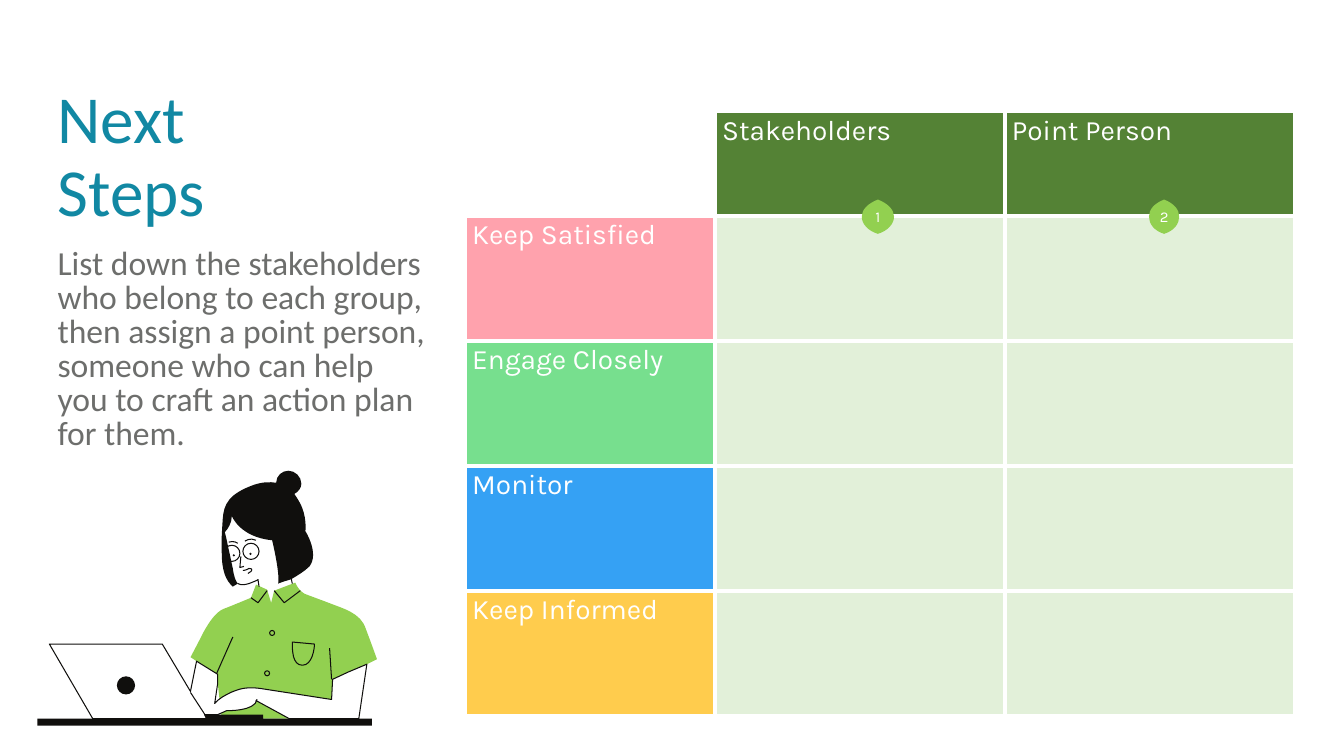
from lxml import etree
from pptx import Presentation
from pptx.dml.color import RGBColor
from pptx.enum.text import MSO_ANCHOR, MSO_AUTO_SIZE, PP_ALIGN
from pptx.oxml.ns import qn
from pptx.util import Cm, Pt

TOP, MIDDLE = MSO_ANCHOR.TOP, MSO_ANCHOR.MIDDLE
LEFT, CENTER = PP_ALIGN.LEFT, PP_ALIGN.CENTER
GROW = MSO_AUTO_SIZE.SHAPE_TO_FIT_TEXT

COLORS = {
    "title": "1188A3", "body": "6D6E6C", "white": "FFFFFF", "ink": "100F0D",
    "lime": "92D050", "header": "548235", "cell": "E2F0D9",
    "pink": "FFA2AD", "green": "77DF8E", "blue": "35A1F4", "yellow": "FFCC4D",
}
GRID = Cm(0.0254)
HEADERS = ["Stakeholders", "Point Person"]
GROUPS = [("Keep Satisfied", "pink"), ("Engage Closely", "green"),
          ("Monitor", "blue"), ("Keep Informed", "yellow")]
BODY = ("List down the stakeholders who belong to each group, then assign a point "
        "person, someone who can help you to craft an action plan for them.")

# Outlines on the drawing grid: pairs are corners, sixes are curves.
FACE = [(292, 602), (260, 602), (256, 575), (256, 575, 255, 575, 247, 578),
        (239, 581, 233, 580, 230, 564), (227, 549, 222, 526, 222, 526),
        (224, 511), (234, 499), (282, 495), (286, 553), (292, 602)]
SHIRT = [(215, 669), (189, 652), (189, 652, 197, 637, 202, 627),
         (207, 618, 214, 607, 222, 604), (230, 601, 249, 593, 249, 593),
         (254, 580), (265, 585), (269, 598), (272, 586), (293, 578),
         (293, 578, 296, 586, 302, 589), (307, 591, 310, 592, 326, 598),
         (341, 604, 358, 608, 363, 624), (369, 640, 374, 654, 374, 654),
         (364, 659), (340, 713), (220, 713), (215, 669)]
ARMS_AND_LAPTOP = [(364, 659), (356, 713), (287, 713), (254, 695), (255, 694),
                   (253, 706, 225, 705, 225, 705), (216, 709), (203, 709), (205, 713),
                   (92, 713), (49, 639), (161, 639), (189, 686), (195, 656),
                   (216, 669), (216, 678), (213, 698), (217, 693, 223, 690, 229, 687),
                   (234, 685), (242, 682, 250, 682, 258, 683), (329, 694), (330, 674),
                   (345, 667), (364, 659)]
HAIR = [(230, 512), (230, 512, 238, 533, 270, 536), (270, 536, 278, 569, 276, 579),
        (276, 579, 281, 577, 288, 575), (290, 574), (295, 571, 302, 567, 307, 562),
        (317, 549, 303, 527, 303, 527), (303, 527, 305, 512, 297, 498),
        (296, 496, 294, 493, 292, 490), (296, 488, 299, 484, 299, 480),
        (299, 473, 293, 467, 286, 467), (280, 467, 274, 472, 274, 479),
        (268, 478, 261, 478, 252, 481), (227, 490, 222, 500, 221, 515),
        (220, 530, 220, 532, 220, 532), (220, 548), (220, 566, 224, 576, 231, 582),
        (236, 579), (234, 577, 232, 572, 231, 564), (228, 550), (226, 541),
        (225, 536, 224, 531, 223, 528), (226, 525, 230, 519, 230, 512)]
POCKET = [(290, 637), (312, 639), (312, 643, 310, 660, 300, 660),
          (290, 660, 290, 645, 290, 637)]
STROKES = [
    [(227, 538), (227, 538, 232, 536, 236, 539)],
    [(243, 537), (243, 537, 248, 533, 254, 536)],
    [(239, 552), (238, 563), (242, 562)],
    [(241, 566), (241, 566, 244, 566, 247, 564), (249, 563, 251, 565, 249, 567), (246, 569)],
    [(236, 579), (240, 581, 243, 580, 247, 579), (252, 577, 255, 576, 256, 575), (257, 582)],
    [(289, 574), (290, 579)],
    [(249, 593), (256, 598), (265, 586)],
    [(272, 586), (282, 598), (298, 586)],
    [(231, 632), (215, 668)],
    [(327, 643), (329, 674)],
    [(189, 687), (204, 710)],
]
RINGS = [(230, 549, 8), (249, 547, 8), (265, 668, 2.5), (270, 628, 2.5)]
DOTS = [(232, 551, 1.2), (248.5, 549.5, 1.2), (125, 680, 9)]


def write(frame, text, size, color, font="Calibri", align=LEFT, spacing=None, before=0, tracking=0):
    """Put formatted text in the first paragraph of a frame."""
    para = frame.paragraphs[0]
    para.alignment, para.space_before = align, Pt(before)
    if spacing:
        para.line_spacing = spacing
    span = para.add_run()
    span.text = text
    span.font.size, span.font.name = Pt(size), font
    span.font.color.rgb = RGBColor.from_string(COLORS[color])
    if tracking:
        span.font._element.set("spc", str(tracking))
    return para


def circle(x, y, r):
    """Return a circle as four curves."""
    k = 0.55 * r
    return [(x, y - r), (x + k, y - r, x + r, y - k, x + r, y),
            (x + r, y + k, x + k, y + r, x, y + r),
            (x - k, y + r, x - r, y + k, x - r, y),
            (x - r, y - k, x - k, y - r, x, y - r)]


def bar(left, top, right, bottom):
    """Return a rectangle as corners."""
    return [(left, top), (right, top), (right, bottom), (left, bottom), (left, top)]


class SlideBuilder:
    """Hold the slide and draw each kind of element on it."""

    def __init__(self, slide):
        self.slide = slide
        self.shapes = slide.shapes

    def start_group(self):
        self.shapes = self.slide.shapes.add_group_shape().shapes

    def outline(self, color, filled, strokes=()):
        ends = [(piece[-2] * GRID, piece[-1] * GRID)
                for contour in [*filled, *strokes] for piece in contour]
        builder = self.shapes.build_freeform(*ends[0], scale=1.0)
        builder.add_line_segments(ends[1:])
        shape = builder.convert_to_shape()
        shape.shadow.inherit = False
        shape.fill.solid()
        shape.fill.fore_color.rgb = RGBColor.from_string(COLORS[color])
        shape.line.fill.background()
        if strokes:
            shape.line.color.rgb = RGBColor.from_string(COLORS[color])
            shape.line.width = Pt(0.75)
        tracks = shape._element.find(".//" + qn("a:pathLst"))
        tracks.remove(tracks[0])
        for contours, style in ((filled, {"stroke": "0"}), (strokes, {"fill": "none"})):
            if contours:
                track = etree.SubElement(tracks, qn("a:path"), w=str(shape.width),
                                         h=str(shape.height), **style)
                for contour in contours:
                    self.contour(track, contour, shape, contours is filled)

    def contour(self, track, pieces, shape, close):
        for index, piece in enumerate(pieces):
            kind = "moveTo" if index == 0 else "lnTo" if len(piece) == 2 else "cubicBezTo"
            step = etree.SubElement(track, qn(f"a:{kind}"))
            for x, y in zip(piece[::2], piece[1::2]):
                etree.SubElement(step, qn("a:pt"), x=str(round(x * GRID) - shape.left),
                                 y=str(round(y * GRID) - shape.top))
        if close:
            etree.SubElement(track, qn("a:close"))

    def placeholder(self, box, left, top, width, height, text, **style):
        box.left, box.top, box.width, box.height = Cm(left), Cm(top), Cm(width), Cm(height)
        frame = box.text_frame
        frame.margin_left = frame.margin_right = frame.margin_top = frame.margin_bottom = 0
        frame.word_wrap, frame.auto_size, frame.vertical_anchor = True, GROW, TOP
        properties = write(frame, text, **style)._p.get_or_add_pPr()
        properties.set("marL", "0")
        properties.set("indent", "0")
        etree.SubElement(properties, qn("a:buNone"))

    def badge(self, number, x, half):
        self.start_group()
        self.outline("lime", [[(x, 198), (x + 10, 202, x + half, 208, x + half, 215),
                               (x + half, 222, x + 10, 229, x, 232),
                               (x - 10, 229, x - half, 222, x - half, 215),
                               (x - half, 208, x - 10, 202, x, 198)]])
        box = self.shapes.add_textbox((x - 28) * GRID, 200 * GRID, 56 * GRID, 32 * GRID)
        frame = box.text_frame
        frame.margin_left = frame.margin_right = frame.margin_top = frame.margin_bottom = Cm(0.1)
        frame.word_wrap, frame.vertical_anchor = True, MIDDLE
        write(frame, str(number), 10.7, "white", "Karla", CENTER, Pt(10.7), tracking=-20)

    def cell(self, cell, text, fill):
        properties = cell._tc.get_or_add_tcPr()
        for side in ("lnL", "lnR", "lnT", "lnB"):
            border = etree.SubElement(properties, qn(f"a:{side}"), w=str(Pt(3)))
            solid = etree.SubElement(border, qn("a:solidFill"))
            etree.SubElement(solid, qn("a:srgbClr"), val=COLORS["white"])
        cell.margin_left = cell.margin_right = Cm(0.18)
        cell.margin_top = cell.margin_bottom = Cm(0.08)
        if fill:
            cell.fill.solid()
            cell.fill.fore_color.rgb = RGBColor.from_string(COLORS[fill])
        else:
            cell.fill.background()
        if text:
            write(cell.text_frame, text, 20, "white", "Karla")

    def plan_table(self):
        rows = [[("", None)] + [(header, "header") for header in HEADERS]]
        rows += [[group] + [("", "cell")] * len(HEADERS) for group in GROUPS]
        table = self.shapes.add_table(len(rows), len(rows[0]), Cm(11.72), Cm(2.8),
                                      Cm(20.9), Cm(15.24)).table
        table.first_row = table.horz_banding = False
        for column, width in zip(table.columns, (6.3, 7.3, 7.3)):
            column.width = Cm(width)
        for index, row in enumerate(rows):
            table.rows[index].height = Cm(3.15 if index else 2.64)
            for position, (text, fill) in enumerate(row):
                self.cell(table.cell(index, position), text, fill)

    def woman_at_laptop(self):
        self.start_group()
        for color, contour in (("white", FACE), ("lime", SHIRT), ("white", ARMS_AND_LAPTOP)):
            self.outline(color, [contour])
        solids = [HAIR, bar(204, 709, 261, 713), bar(37, 713, 369, 720)]
        self.outline("ink", solids + [circle(*dot) for dot in DOTS],
                     [ARMS_AND_LAPTOP, POCKET, *STROKES, *(circle(*ring) for ring in RINGS)])


def main():
    deck = Presentation()
    deck.slide_width, deck.slide_height = Cm(33.87), Cm(19.05)
    page = deck.slides.add_slide(deck.slide_layouts[1])
    builder = SlideBuilder(page)
    builder.plan_table()
    builder.placeholder(page.shapes.title, 1.45, 2.16, 5.84, 3.68, "Next Steps",
                        size=48, color="title", spacing=0.9, before=10)
    builder.placeholder(page.placeholders[1], 1.45, 6.25, 9.37, 5.13, BODY,
                        size=24, color="body", spacing=Pt(24.3))
    builder.badge(1, 871, 16)
    builder.badge(2, 1155, 15)
    builder.woman_at_laptop()
    deck.save("out.pptx")


if __name__ == "__main__":
    main()
